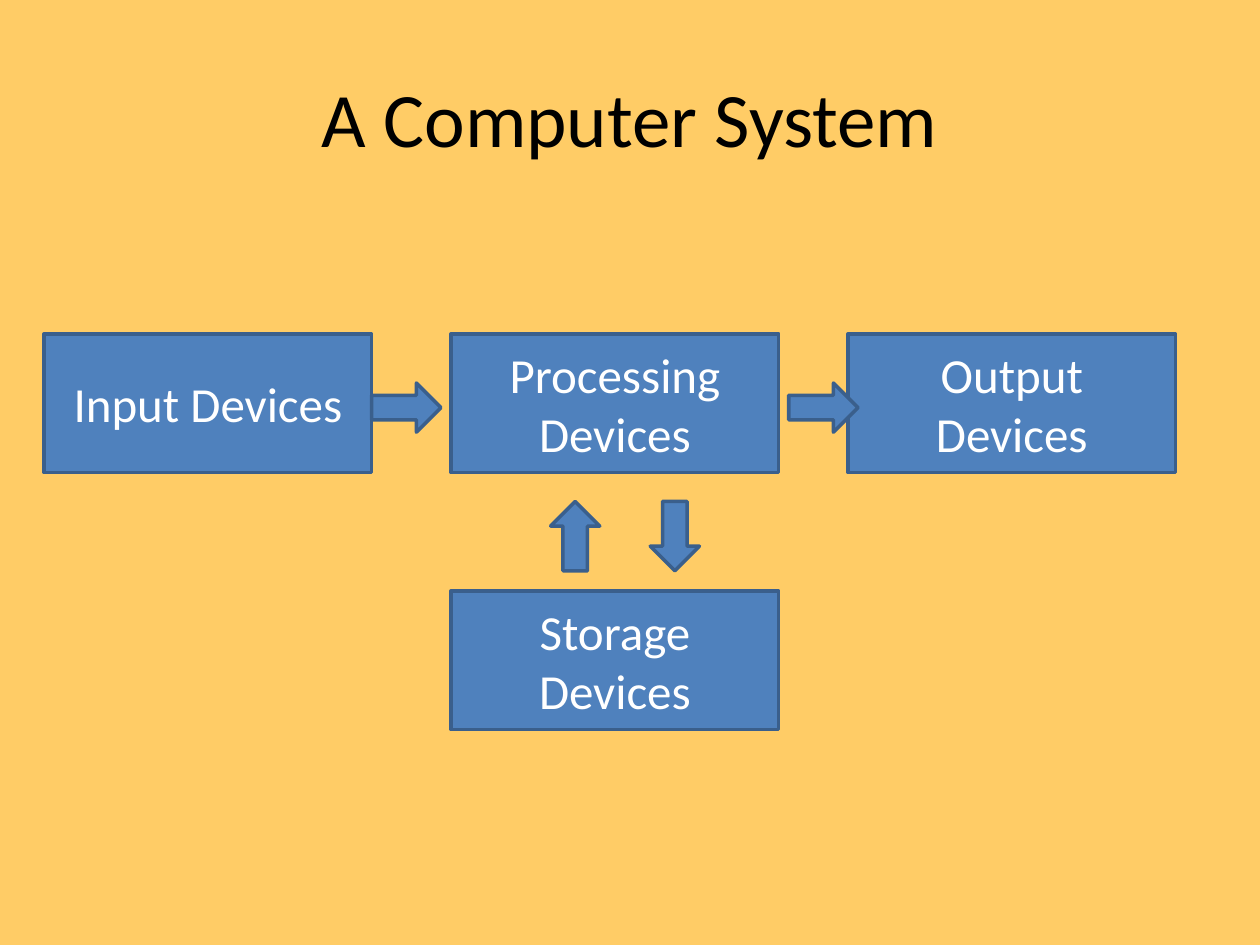
from pptx import Presentation
from pptx.dml.color import RGBColor
from pptx.enum.shapes import MSO_SHAPE
from pptx.enum.text import MSO_ANCHOR, PP_ALIGN
from pptx.util import Pt

RECT = MSO_SHAPE.RECTANGLE
ARROW = MSO_SHAPE.RIGHT_ARROW
CENTER = PP_ALIGN.CENTER
MIDDLE = MSO_ANCHOR.MIDDLE

SAND = RGBColor(0xFF, 0xCC, 0x66)
BLUE = RGBColor(0x4F, 0x81, 0xBD)
NAVY = RGBColor(0x3A, 0x5F, 0x8C)
WHITE = RGBColor(0xFF, 0xFF, 0xFF)
BLACK = RGBColor(0, 0, 0)

BOX_W, BOX_H = 187.2, 79.2
ARROW_W, ARROW_H = 39.6, 28.1
LEFT, MID, RIGHT = 25.2, 257.8, 484.6
TOP, LOW = 190.8, 337.7


def write(shape, text, size=28, color=WHITE, font="Calibri"):
    frame = shape.text_frame
    frame.word_wrap = True
    frame.vertical_anchor = MIDDLE
    para = frame.paragraphs[0]
    para.alignment = CENTER
    run = para.add_run()
    run.text = text
    run.font.name = font
    run.font.size = Pt(size)
    run.font.color.rgb = color


class Board:
    """Holds the slide and the look shared by its shapes."""

    def __init__(self, slide, fill=BLUE, line=NAVY, width=2):
        self.slide = slide
        self.fill = fill
        self.line = line
        self.width = width

    def ground(self, color):
        fill = self.slide.background.fill
        fill.solid()
        fill.fore_color.rgb = color

    def title(self, text, x, y, w, h):
        shape = self.slide.shapes.title
        shape.left, shape.top = Pt(x), Pt(y)
        shape.width, shape.height = Pt(w), Pt(h)
        write(shape, text, size=44, color=BLACK)

    def shape(self, kind, x, y, w, h):
        shape = self.slide.shapes.add_shape(kind, Pt(x), Pt(y), Pt(w), Pt(h))
        shape.shadow.inherit = False
        shape.fill.solid()
        shape.fill.fore_color.rgb = self.fill
        shape.line.color.rgb = self.line
        shape.line.width = Pt(self.width)
        return shape

    def box(self, text, x, y):
        write(self.shape(RECT, x, y, BOX_W, BOX_H), text)

    def arrow(self, x, y, turn=0):
        self.shape(ARROW, x, y, ARROW_W, ARROW_H).rotation = turn


def main():
    deck = Presentation()
    deck.slide_width, deck.slide_height = Pt(720), Pt(540)
    board = Board(deck.slides.add_slide(deck.slide_layouts[5]))
    board.ground(SAND)
    board.title("A Computer System", 36, 21.6, 648, 90)

    for text, x, y in (
        ("Input Devices", LEFT, TOP),
        ("Processing Devices", MID, TOP),
        ("Storage Devices", MID, LOW),
        ("Output Devices", RIGHT, TOP),
    ):
        board.box(text, x, y)

    flow = TOP + (BOX_H - ARROW_H) / 2 + 2.5
    for x in (LEFT + BOX_W, 450.7):
        board.arrow(x, flow)
    for x, turn in ((365.8, 90), (308.9, 270)):
        board.arrow(x, 292.3, turn)

    deck.save("out.pptx")


if __name__ == "__main__":
    main()
